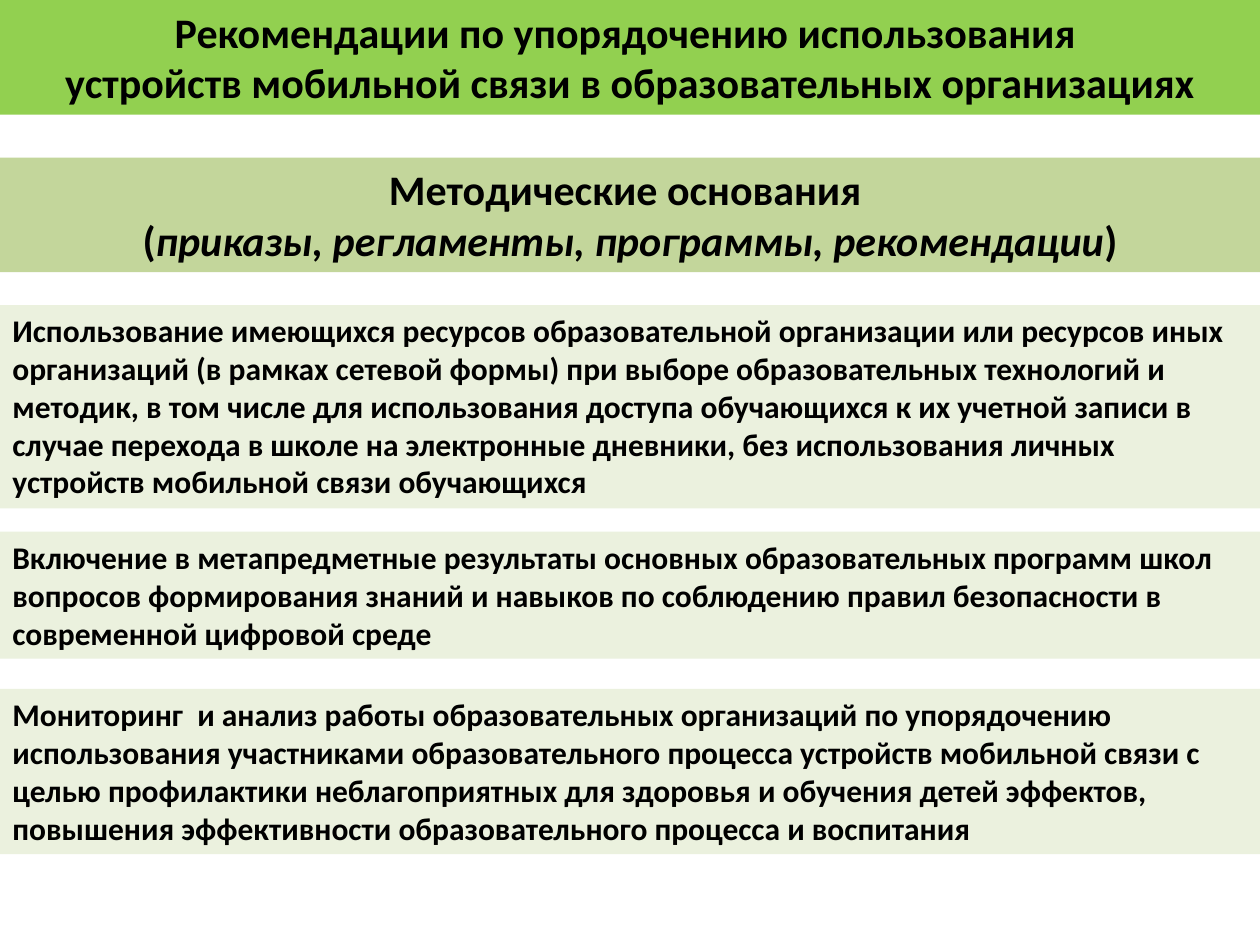
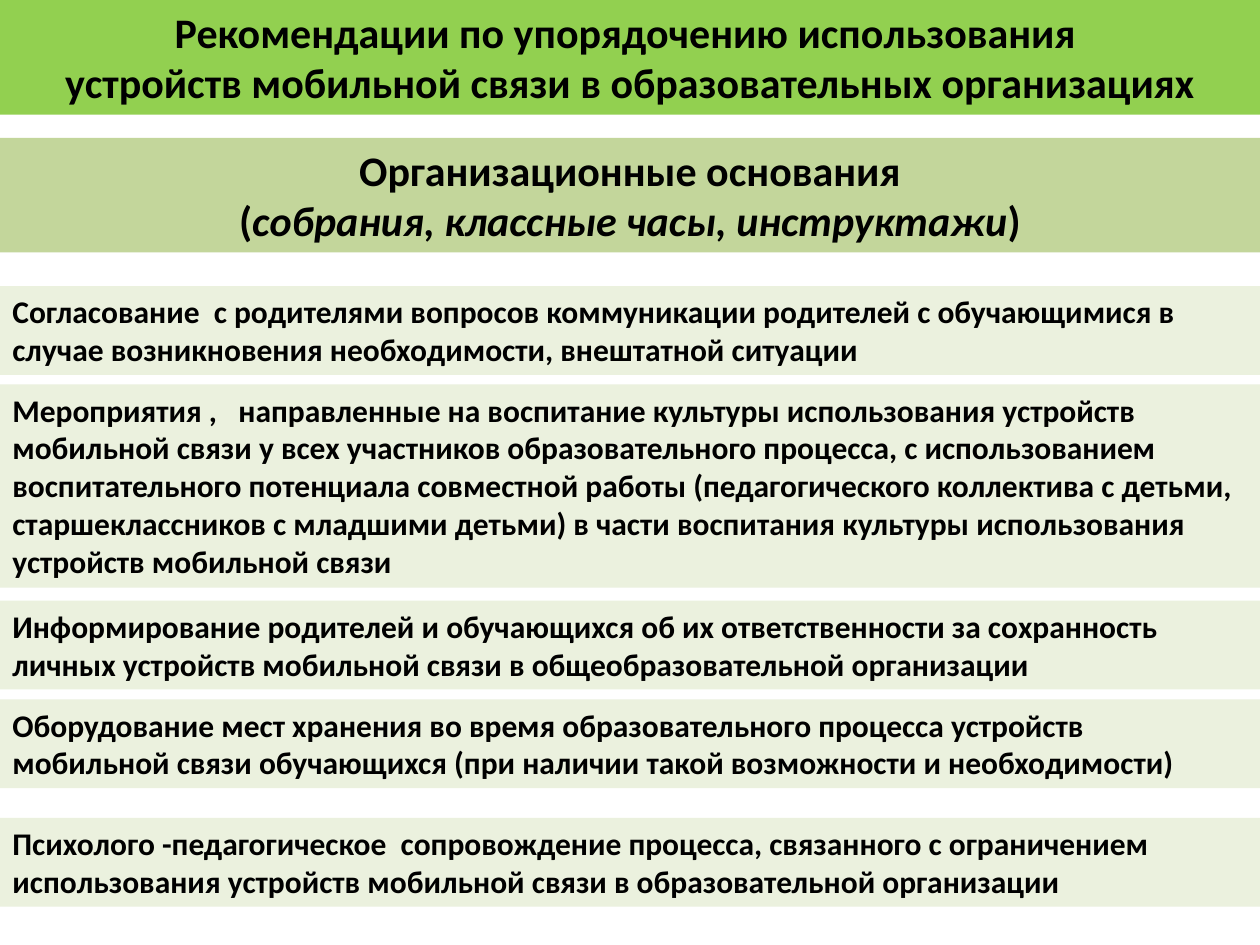
from pptx import Presentation
from pptx.dml.color import RGBColor
from pptx.enum.text import MSO_ANCHOR, MSO_AUTO_SIZE, PP_ALIGN
from pptx.util import Cm, Pt

TITLE = [
    [("Рекомендации по упорядочению использования ", False)],
    [("устройств мобильной связи в образовательных организациях", False)],
]

SLIDES = [
    {
        "heading": "Методические основания ",
        "examples": "приказы, регламенты, программы, рекомендации",
        "heading_top": 3.18,
        "items": [
            (6.15, 5, "Использование имеющихся ресурсов образовательной организации или ресурсов иных "
                      "организаций (в рамках сетевой формы) при выборе образовательных технологий и "
                      "методик, в том числе для использования доступа обучающихся к их учетной записи в "
                      "случае перехода в школе на электронные дневники, без использования личных "
                      "устройств мобильной связи обучающихся"),
            (10.72, 3, "Включение в метапредметные результаты основных образовательных программ школ "
                       "вопросов формирования знаний и навыков по соблюдению правил безопасности в "
                       "современной цифровой среде"),
            (13.89, 4, "Мониторинг  и анализ работы образовательных организаций по упорядочению "
                       "использования участниками образовательного процесса устройств мобильной связи с "
                       "целью профилактики неблагоприятных для здоровья и обучения детей эффектов, "
                       "повышения эффективности образовательного процесса и воспитания"),
        ],
    },
    {
        "heading": "Организационные основания",
        "examples": "собрания, классные часы, инструктажи",
        "heading_top": 2.78,
        "items": [
            (5.77, 2, "Согласование  с родителями вопросов коммуникации родителей с обучающимися в "
                      "случае возникновения необходимости, внештатной ситуации"),
            (7.75, 5, "Мероприятия ,   направленные на воспитание культуры использования устройств "
                      "мобильной связи у всех участников образовательного процесса, с использованием "
                      "воспитательного потенциала совместной работы (педагогического коллектива с детьми, "
                      "старшеклассников с младшими детьми) в части воспитания культуры использования "
                      "устройств мобильной связи"),
            (12.11, 2, "Информирование родителей и обучающихся об их ответственности за сохранность "
                       "личных устройств мобильной связи в общеобразовательной организации"),
            (14.1, 2, "Оборудование мест хранения во время образовательного процесса устройств "
                      "мобильной связи обучающихся (при наличии такой возможности и необходимости)"),
            (16.49, 2, "Психолого -педагогическое  сопровождение процесса, связанного с ограничением "
                       "использования устройств мобильной связи в образовательной организации"),
        ],
    },
]

TITLE_GREEN = RGBColor(0x92, 0xD0, 0x50)
HEADING_GREEN = RGBColor(0xC3, 0xD6, 0x9B)
ITEM_GREEN = RGBColor(0xEB, 0xF1, 0xDE)
BLACK = RGBColor(0, 0, 0)
FONT = "Calibri"
WIDTH, HEIGHT = Cm(25.4), Cm(19.05)
BAND_HEIGHT = 2.31
LINE_HEIGHT, PADDING = 0.77, 0.25


def write(tf, paragraphs, size=18, align=PP_ALIGN.LEFT):
    tf.word_wrap = True
    tf.auto_size = MSO_AUTO_SIZE.SHAPE_TO_FIT_TEXT
    tf.vertical_anchor = MSO_ANCHOR.TOP
    for i, runs in enumerate(paragraphs):
        p = tf.paragraphs[0] if i == 0 else tf.add_paragraph()
        p.alignment = align
        for text, italic in runs:
            r = p.add_run()
            r.text = text
            r.font.name = FONT
            r.font.size = Pt(size)
            r.font.bold = True
            r.font.italic = italic
            r.font.color.rgb = BLACK


def place(sp, top, height, color, paragraphs, **text_format):
    sp.left, sp.top, sp.width, sp.height = Cm(0), Cm(top), WIDTH, Cm(height)
    sp.fill.solid()
    sp.fill.fore_color.rgb = color
    write(sp.text_frame, paragraphs, **text_format)


def add_band(s, *args, **text_format):
    place(s.shapes.add_textbox(0, 0, WIDTH, Cm(1)), *args, **text_format)


def build_slide(prs, content):
    s = prs.slides.add_slide(prs.slide_layouts[5])
    centred = {"size": 24, "align": PP_ALIGN.CENTER}
    place(s.shapes.title, 0, BAND_HEIGHT, TITLE_GREEN, TITLE, **centred)
    heading = [
        [(content["heading"], False)],
        [("(", False), (content["examples"], True), (")", False)],
    ]
    add_band(s, content["heading_top"], BAND_HEIGHT, HEADING_GREEN, heading, **centred)
    for top, lines, text in content["items"]:
        add_band(s, top, PADDING + lines * LINE_HEIGHT, ITEM_GREEN, [[(text, False)]])


def main():
    prs = Presentation()
    prs.slide_width, prs.slide_height = WIDTH, HEIGHT
    for content in SLIDES:
        build_slide(prs, content)
    prs.save("out.pptx")


if __name__ == "__main__":
    main()
